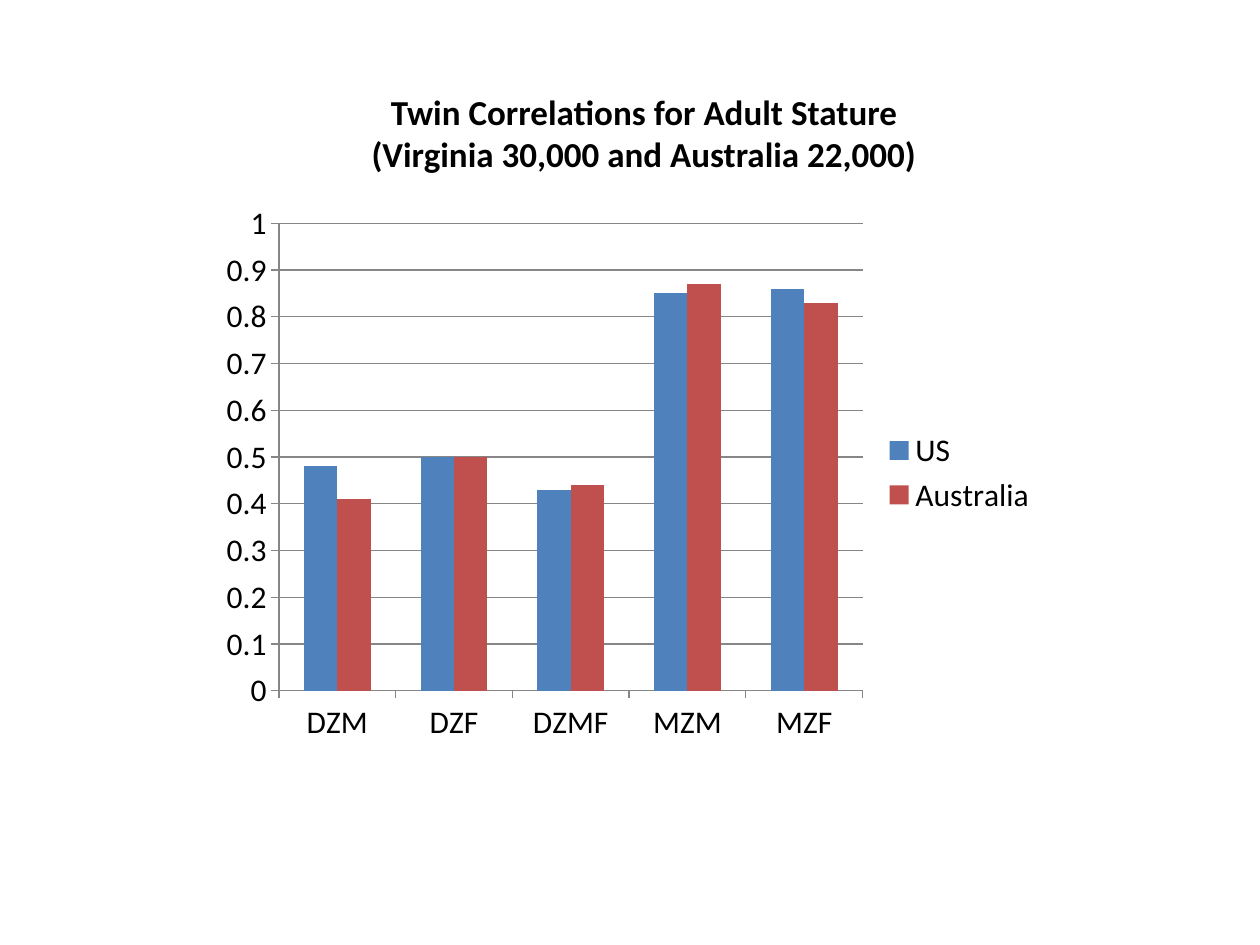
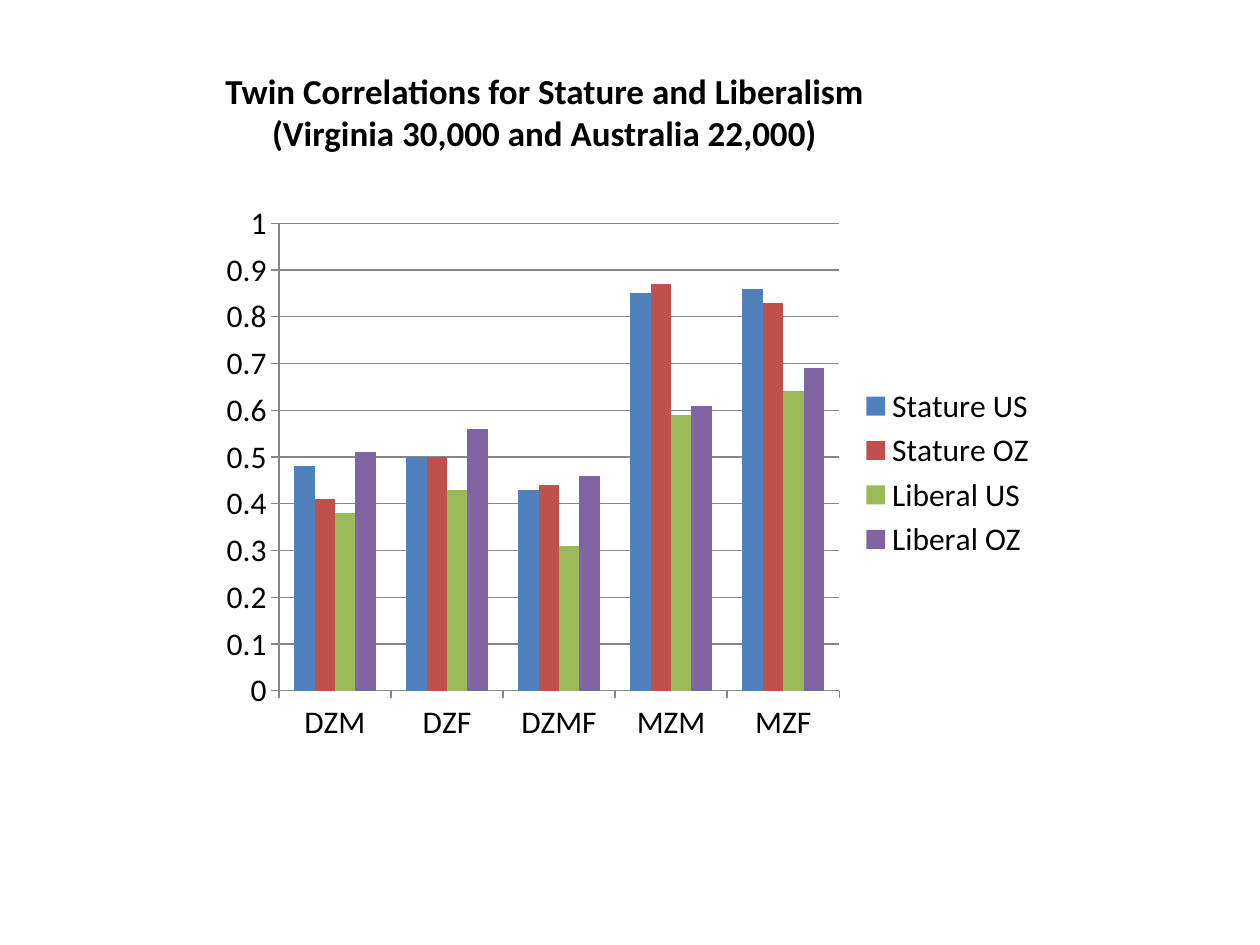
from pptx import Presentation
from pptx.chart import data as chart_data
from pptx.dml.color import RGBColor
from pptx.enum import chart as chart_enum, text
from pptx.util import Cm, Pt

FONT = "Calibri"
BLACK = "000000"
AXIS_GREY = "868686"
SERIES_COLOURS = ["4F81BD", "C0504D", "9BBB59", "8064A2"]

TWIN_TYPES = ["DZM", "DZF", "DZMF", "MZM", "MZF"]
STATURE_US = [0.48, 0.5, 0.43, 0.85, 0.86]
STATURE_OZ = [0.41, 0.5, 0.44, 0.87, 0.83]
LIBERAL_US = [0.38, 0.43, 0.31, 0.59, 0.64]
LIBERAL_OZ = [0.51, 0.56, 0.46, 0.61, 0.69]
SAMPLES = "(Virginia 30,000 and Australia 22,000)"

# Heading, its left, top and width in cm, and the series by name
PAGES = [
    ("Twin Correlations for Adult Stature", (7.2, 1.7, 11.57),
     {"US": STATURE_US, "Australia": STATURE_OZ}),
    ("Twin Correlations for Stature and Liberalism", (4.23, 1.27, 13.5),
     {"Stature US": STATURE_US, "Stature OZ": STATURE_OZ,
      "Liberal US": LIBERAL_US, "Liberal OZ": LIBERAL_OZ}),
]


def colour(hex_string):
    return RGBColor.from_string(hex_string)


def style_font(font, size, bold):
    font.name = FONT
    font.size = Pt(size)
    font.bold = bold
    font.color.rgb = colour(BLACK)


deck = Presentation()
deck.slide_width = Cm(25.4)
deck.slide_height = Cm(19.05)
title_only = deck.slide_layouts[5]

for heading, (left, top, width), correlations in PAGES:
    page = deck.slides.add_slide(title_only)

    # Title
    title = page.shapes.title
    title.left, title.top, title.width, title.height = Cm(left), Cm(top), Cm(width), Cm(1.96)
    frame = title.text_frame
    frame.text = f"{heading}\n{SAMPLES}"
    frame.word_wrap = False
    frame.auto_size = text.MSO_AUTO_SIZE.NONE
    frame.vertical_anchor = text.MSO_ANCHOR.TOP
    for para in frame.paragraphs:
        para.alignment = text.PP_ALIGN.CENTER
        para.space_before = Pt(0)
        for span in para.runs:
            style_font(span.font, 20, True)

    # Chart
    twin_data = chart_data.CategoryChartData()
    twin_data.categories = TWIN_TYPES
    for name, values in correlations.items():
        twin_data.add_series(name, values)
    chart = page.shapes.add_chart(
        chart_enum.XL_CHART_TYPE.COLUMN_CLUSTERED,
        Cm(4.23), Cm(3.89), Cm(16.93), Cm(11.28), twin_data).chart
    style_font(chart.font, 18, False)
    chart.has_title = False
    chart.has_legend = True
    chart.legend.position = chart_enum.XL_LEGEND_POSITION.RIGHT
    chart.legend.include_in_layout = False

    plot = chart.plots[0]
    plot.gap_width = 150
    plot.overlap = 0
    plot.vary_by_categories = False
    for series, fill_colour in zip(plot.series, SERIES_COLOURS):
        series.format.fill.solid()
        series.format.fill.fore_color.rgb = colour(fill_colour)

    value_axis = chart.value_axis
    value_axis.minimum_scale = 0
    value_axis.maximum_scale = 1
    value_axis.major_unit = 0.1
    value_axis.has_major_gridlines = True
    for axis in (chart.category_axis, value_axis):
        axis.major_tick_mark = chart_enum.XL_TICK_MARK.OUTSIDE
    for lined in (chart.category_axis, value_axis, value_axis.major_gridlines):
        lined.format.line.color.rgb = colour(AXIS_GREY)
        lined.format.line.width = Pt(0.75)

deck.save("out.pptx")
